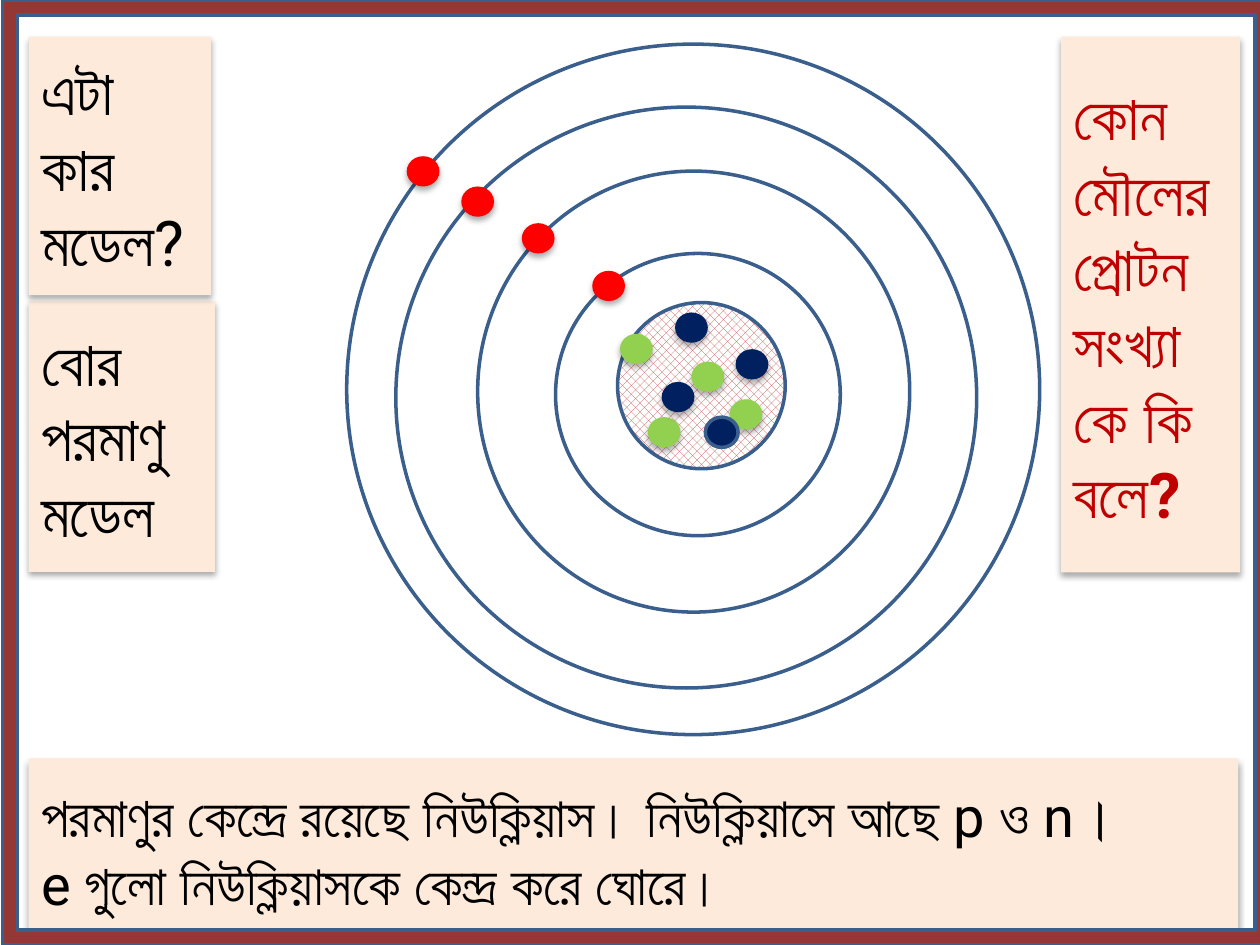
import pptx
import pptx.dml.color
import pptx.enum.dml
import pptx.enum.shapes
import pptx.enum.text
import pptx.oxml
import pptx.oxml.ns
import pptx.util

Cm = pptx.util.Cm
Pt = pptx.util.Pt
RGBColor = pptx.dml.color.RGBColor
MSO_SHAPE = pptx.enum.shapes.MSO_SHAPE

OUTLINE = RGBColor(0x3A, 0x5F, 0x8C)
HATCH = RGBColor(0xC0, 0x50, 0x4D)
WHITE = RGBColor(0xFF, 0xFF, 0xFF)
BLACK = RGBColor(0x00, 0x00, 0x00)
RED = RGBColor(0xFF, 0x00, 0x00)
GREEN = RGBColor(0x92, 0xD0, 0x50)
NAVY = RGBColor(0x00, 0x20, 0x60)
PEACH = RGBColor(0xFD, 0xEA, 0xDA)
MAROON = RGBColor(0x95, 0x37, 0x35)
DARK_RED = RGBColor(0xC0, 0x00, 0x00)

SHADOW = (
    f"<a:effectLst {pptx.oxml.ns.nsdecls('a')}>"
    '<a:outerShdw blurRad="44450" dist="27940" dir="5400000" rotWithShape="0">'
    '<a:srgbClr val="000000"><a:alpha val="32000"/></a:srgbClr>'
    "</a:outerShdw></a:effectLst>"
)

prs = pptx.Presentation()
prs.slide_width, prs.slide_height = Cm(25.4), Cm(19.05)
s = prs.slides.add_slide(prs.slide_layouts[6])


def add_shape(kind, box, fill=None, outlined=False):
    """Add a shape that has either an outline or a soft shadow."""
    sp = s.shapes.add_shape(kind, *[Cm(v) for v in box])
    if fill is None:
        sp.fill.background()
    else:
        sp.fill.solid()
        sp.fill.fore_color.rgb = fill
    if outlined:
        sp.line.color.rgb = OUTLINE
        sp.line.width = Pt(2)
        sp.shadow.inherit = False
    else:
        sp.line.fill.background()
        sp._element.spPr.append(pptx.oxml.parse_xml(SHADOW))
    return sp


def add_panel(box, lines, size, color=BLACK, bold=False):
    sp = add_shape(MSO_SHAPE.RECTANGLE, box, PEACH)
    tf = sp.text_frame
    tf.word_wrap = True
    tf.vertical_anchor = pptx.enum.text.MSO_ANCHOR.MIDDLE
    for i, line in enumerate(lines):
        p = tf.paragraphs[0] if i == 0 else tf.add_paragraph()
        p.alignment = pptx.enum.text.PP_ALIGN.LEFT
        r = p.add_run()
        r.text = line
        for name, value in {"name": "Roboto", "size": Pt(size), "bold": bold}.items():
            setattr(r.font, name, value)
        r.font.color.rgb = color


# Electron shells, outermost first
for shell in [
    (6.99, 0.89, 13.97, 13.92),
    (7.98, 2.16, 11.71, 11.71),
    (9.63, 3.45, 8.71, 8.89),
    (11.2, 5.11, 5.74, 5.69),
]:
    add_shape(MSO_SHAPE.OVAL, shell, outlined=True)

nucleus = add_shape(MSO_SHAPE.OVAL, (12.45, 6.1, 3.38, 3.35), outlined=True)
nucleus.fill.patterned()
nucleus.fill.pattern = pptx.enum.dml.MSO_PATTERN.PERCENT_50
nucleus.fill.fore_color.rgb = HATCH
nucleus.fill.back_color.rgb = WHITE

# Particles: electrons red, nucleons green and navy
particles = {
    RED: [(8.2, 3.15), (9.3, 3.76), (10.52, 4.5), (11.94, 5.46)],
    GREEN: [(14.71, 8.05), (13.94, 7.29), (12.5, 6.73), (13.06, 8.41)],
    NAVY: [(13.34, 7.7), (14.83, 7.04), (13.61, 6.3)],
}
for color, corners in particles.items():
    for x, y in corners:
        add_shape(MSO_SHAPE.OVAL, (x, y, 0.66, 0.61), color)
add_shape(MSO_SHAPE.OVAL, (14.22, 8.41, 0.66, 0.61), NAVY, outlined=True)

add_panel(
    (0.58, 15.29, 24.38, 3.66),
    [
        "পরমাণুর কেন্দ্রে রয়েছে নিউক্লিয়াস। নিউক্লিয়াসে আছে p ও n।",
        "e গুলো নিউক্লিয়াসকে কেন্দ্র করে ঘোরে।",
    ],
    32,
)
add_panel((0.58, 6.07, 3.76, 5.46), ["বোর পরমাণু মডেল"], 36)
add_panel((0.58, 0.74, 3.68, 5.21), ["এটা কার মডেল?"], 36)

frame = add_shape(MSO_SHAPE.FRAME, (0.05, 0, 25.55, 19.05), MAROON, outlined=True)
frame.adjustments[0] = 0.016

add_panel(
    (21.39, 0.74, 3.61, 10.8),
    ["কোন মৌলেরপ্রোটন সংখ্যাকে কি বলে?"],
    36,
    DARK_RED,
    bold=True,
)

prs.save("out.pptx")
